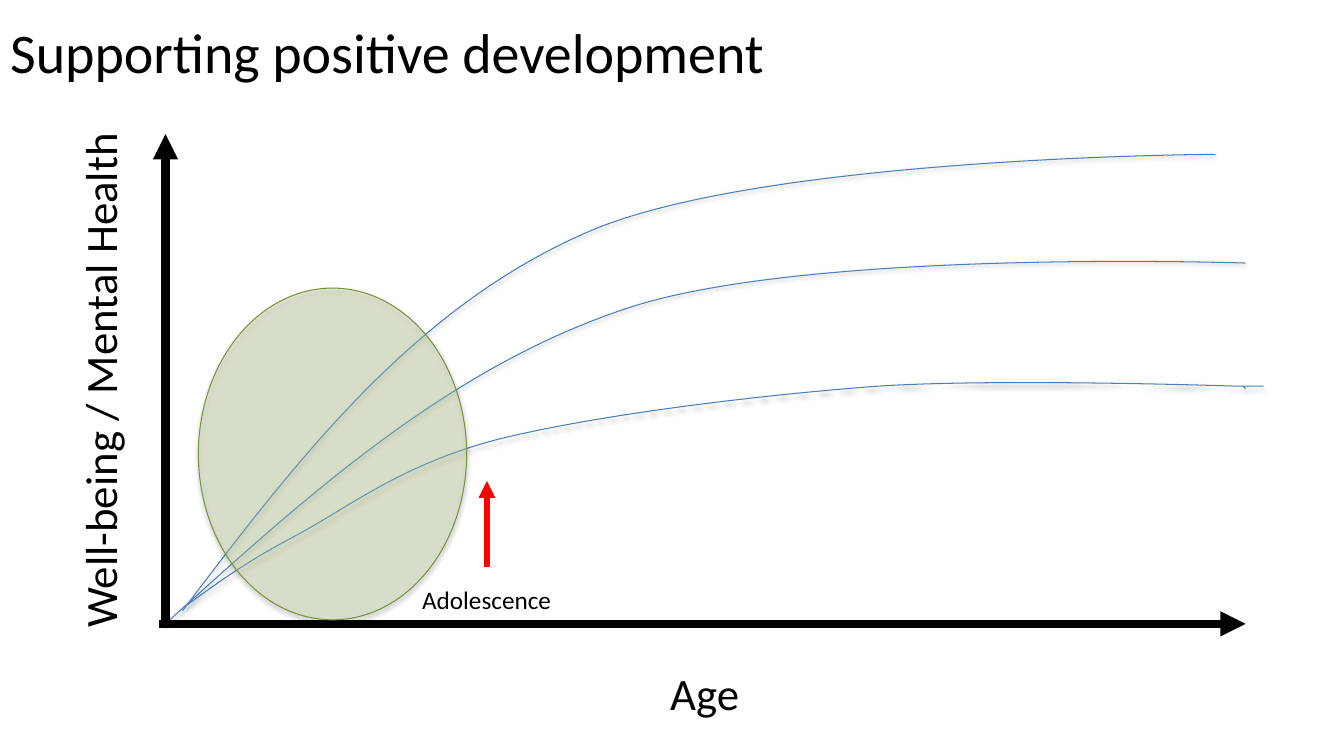
from lxml import etree
from pptx import Presentation
from pptx.dml.color import RGBColor
from pptx.enum.shapes import MSO_CONNECTOR, MSO_SHAPE
from pptx.enum.text import MSO_ANCHOR, MSO_AUTO_SIZE, PP_ALIGN
from pptx.oxml.ns import qn
from pptx.util import Cm, Pt

STRAIGHT = MSO_CONNECTOR.STRAIGHT
OVAL = MSO_SHAPE.OVAL
MIDDLE = MSO_ANCHOR.MIDDLE
FIT_SHAPE = MSO_AUTO_SIZE.SHAPE_TO_FIT_TEXT
LEFT = PP_ALIGN.LEFT

BLACK = RGBColor(0x00, 0x00, 0x00)
RED = RGBColor(0xFF, 0x00, 0x00)
BLUE = RGBColor(0x4B, 0x7E, 0xBC)
PALE_GREEN = RGBColor(0xC3, 0xD6, 0x9B)
DARK_GREEN = RGBColor(0x77, 0x93, 0x3C)
FONT = "Calibri"

TITLE = "Supporting positive development"
CURVES = [
    [(4.17, 15.72),
     (7.72, 12.5), (11.28, 9.27), (15.8, 7.77),
     (20.35, 6.25), (31.39, 6.63), (31.39, 6.63)],
    [(4.6, 15.39),
     (7.49, 11.58), (10.41, 7.77), (14.76, 5.87),
     (19.08, 3.94), (30.63, 3.89), (30.63, 3.89)],
    [(4.72, 15.24),
     (5.46, 14.71), (6.17, 14.17), (7.47, 13.49),
     (8.79, 12.78), (10.11, 11.71), (12.55, 11.07),
     (15.01, 10.46), (19.05, 9.96), (22.15, 9.73),
     (25.25, 9.53), (31.12, 9.73), (31.12, 9.73),
     (32.64, 9.73), (31.27, 9.73), (31.32, 9.73),
     (31.37, 9.75), (31.39, 9.8), (31.39, 9.8)],
]
AXES = [
    ((4.17, 15.72), (4.17, 3.38), BLACK, 6),
    ((4.01, 15.72), (31.39, 15.72), BLACK, 6),
]
ADOLESCENCE_ARROW = ((12.27, 14.3), (12.27, 12.12), RED, 4)
AXIS_LABELS = [
    ("Well-being / Mental Health", (-4.04, 8.69, 13.11, 1.63), 270, 32),
    ("Age", (16.64, 16.66, 2.26, 1.63), 0, 32),
]
ADOLESCENCE_LABEL = ("Adolescence", (10.39, 14.61, 3.81, 1.02), 0, 18)
ADOLESCENCE_ELLIPSE = (5.0, 7.26, 6.76, 8.36)


def lengths(values):
    return [Cm(value) for value in values]


def format_text(shape, text, size):
    shape.text_frame.text = text
    paragraph = shape.text_frame.paragraphs[0]
    paragraph.alignment = LEFT
    paragraph.font.name = FONT
    paragraph.font.size = Pt(size)
    paragraph.font.color.rgb = BLACK


def add_shadow(shape):
    shape.shadow.inherit = False
    effects = shape._element.spPr.find(qn("a:effectLst"))
    shadow = etree.SubElement(effects, qn("a:outerShdw"), blurRad="40000",
                              dist="23000", dir="5400000", rotWithShape="0")
    color = etree.SubElement(shadow, qn("a:srgbClr"), val=str(BLACK))
    etree.SubElement(color, qn("a:alpha"), val="35000")


def outline(shape, color):
    shape.line.color.rgb = color
    shape.line.width = Pt(0.75)
    add_shadow(shape)


def add_curve(slide, points):
    start, *rest = [lengths(point) for point in points]
    builder = slide.shapes.build_freeform(*start)
    builder.add_line_segments(rest, close=False)
    curve = builder.convert_to_shape()
    segments = list(curve._element.iter(qn("a:lnTo")))
    for index in range(0, len(segments), 3):
        first, *others = segments[index:index + 3]
        bezier = etree.Element(qn("a:cubicBezTo"))
        first.addprevious(bezier)
        for segment in (first, *others):
            bezier.append(segment[0])
            segment.getparent().remove(segment)
    curve.fill.background()
    outline(curve, BLUE)


def add_arrow(slide, start, end, color, width):
    arrow = slide.shapes.add_connector(STRAIGHT, *lengths(start + end))
    arrow.line.color.rgb = color
    arrow.line.width = Pt(width)
    etree.SubElement(arrow.line._get_or_add_ln(), qn("a:tailEnd"), type="triangle")
    etree.SubElement(arrow._element.spPr, qn("a:effectLst"))


def add_label(slide, text, box, rotation, size):
    label = slide.shapes.add_textbox(*lengths(box))
    label.rotation = rotation
    label.text_frame.word_wrap = False
    label.text_frame.auto_size = FIT_SHAPE
    format_text(label, text, size)


def add_ellipse(slide, box):
    ellipse = slide.shapes.add_shape(OVAL, *lengths(box))
    ellipse.fill.solid()
    ellipse.fill.fore_color.rgb = PALE_GREEN
    color = ellipse._element.spPr.find(qn("a:solidFill"))[0]
    etree.SubElement(color, qn("a:alpha"), val="34000")
    outline(ellipse, DARK_GREEN)


def main():
    presentation = Presentation()
    presentation.slide_width = Cm(33.87)
    presentation.slide_height = Cm(19.05)
    slide = presentation.slides.add_slide(presentation.slide_layouts[5])

    title = slide.shapes.title
    title.left, title.top, title.width, title.height = lengths((0, 0.05, 31.67, 2.49))
    title.text_frame.vertical_anchor = MIDDLE
    format_text(title, TITLE, 40)

    for points in CURVES:
        add_curve(slide, points)
    for axis in AXES:
        add_arrow(slide, *axis)
    for label in AXIS_LABELS:
        add_label(slide, *label)
    add_arrow(slide, *ADOLESCENCE_ARROW)
    add_label(slide, *ADOLESCENCE_LABEL)
    add_ellipse(slide, ADOLESCENCE_ELLIPSE)

    presentation.save("out.pptx")


if __name__ == "__main__":
    main()
